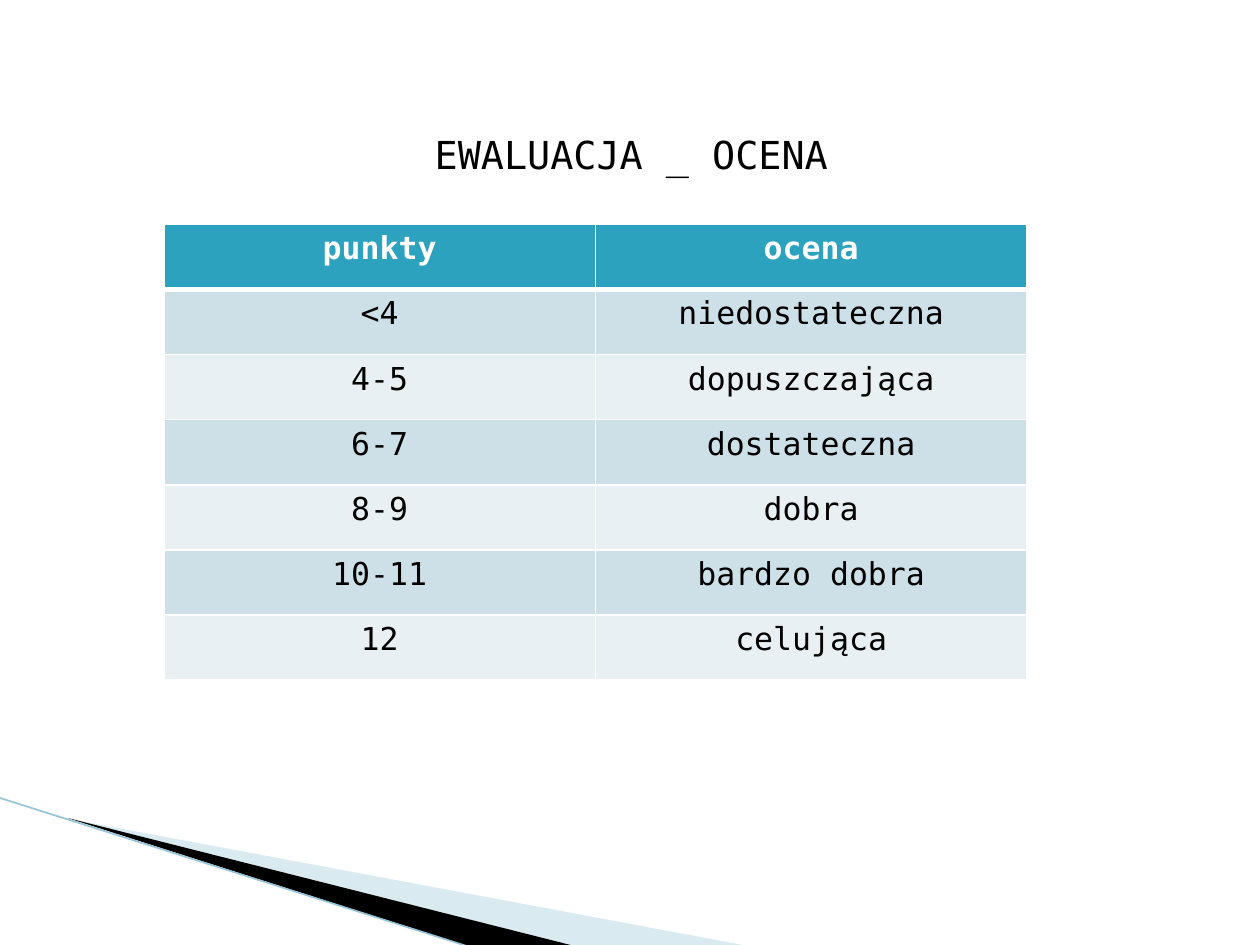
from lxml import etree
from pptx import Presentation
from pptx.dml.color import RGBColor
from pptx.enum.shapes import MSO_CONNECTOR
from pptx.enum.text import MSO_ANCHOR, MSO_AUTO_SIZE, PP_ALIGN
from pptx.oxml.ns import qn
from pptx.util import Inches, Pt

CENTER, LEFT = PP_ALIGN.CENTER, PP_ALIGN.LEFT
TOP = MSO_ANCHOR.TOP
GROW = MSO_AUTO_SIZE.SHAPE_TO_FIT_TEXT
LINE = MSO_CONNECTOR.STRAIGHT
FONT = "DejaVu Sans Mono"
WIDE, HIGH = 10, 7.5
ROWS = [
    ("punkty", "ocena"),
    ("<4", "niedostateczna"),
    ("4-5", "dopuszczająca"),
    ("6-7", "dostateczna"),
    ("8-9", "dobra"),
    ("10-11", "bardzo dobra"),
    ("12", "celująca"),
]


def paint(color, hue):
    color.rgb = RGBColor.from_string(hue)


def style(par, size, hue, bold, align):
    par.alignment = align
    par.font.name = FONT
    par.font.size = Pt(size)
    par.font.bold = bold
    paint(par.font.color, hue)


def wedge(slide, points, hue, alpha=None):
    dots = [(Inches(x), Inches(y)) for x, y in points]
    form = slide.shapes.build_freeform(*dots[0])
    form.add_line_segments(dots[1:], close=True)
    shape = form.convert_to_shape()
    shape.shadow.inherit = False
    shape.fill.solid()
    paint(shape.fill.fore_color, hue)
    shape.line.fill.background()
    if alpha:
        tone = shape.fill._xPr.find(".//" + qn("a:srgbClr"))
        etree.SubElement(tone, qn("a:alpha"), val=str(alpha * 1000))


def add_corner(slide, left, top):
    base = HIGH + 0.01
    wedge(slide, [(left + 0.02, top + 0.01), (5.95, base), (4.56, base)],
          "A0CBDC", 40)
    wedge(slide, [(left, top), (4.57, base), (3.72, base)], "000000")
    edge = slide.shapes.add_connector(
        LINE, Inches(-0.01), Inches(top - 0.16), Inches(3.71), Inches(base))
    paint(edge.line.color, "97C5D8")
    edge.line.width = Pt(0.95)
    etree.SubElement(edge._element.spPr, qn("a:effectLst"))


def add_edge(cell, side, width):
    props = cell._tc.get_or_add_tcPr()
    line = etree.SubElement(props, qn("a:ln" + side), w=str(Pt(width)))
    fill = etree.SubElement(line, qn("a:solidFill"))
    etree.SubElement(fill, qn("a:srgbClr"), val="FFFFFF")


def add_grades(slide, left, top, width, height):
    frame = slide.shapes.add_table(
        len(ROWS), len(ROWS[0]), Inches(left), Inches(top),
        Inches(width), Inches(height))
    for i, row in enumerate(ROWS):
        head = i == 0
        hue = "2DA2BF" if head else ("E8F0F4", "CDE0E8")[i % 2]
        for j, word in enumerate(row):
            cell = frame.table.cell(i, j)
            for side in "LRTB":
                thick = (i, side) in ((0, "B"), (1, "T"))
                add_edge(cell, side, 3 if thick else 1)
            cell.fill.solid()
            paint(cell.fill.fore_color, hue)
            cell.text = word
            style(cell.text_frame.paragraphs[0], 18,
                  "FFFFFF" if head else "000000", head, CENTER)


def add_title(slide, left, top, width, height):
    title = slide.shapes.title
    title.left, title.top = Inches(left), Inches(top)
    title.width, title.height = Inches(width), Inches(height)
    frame = title.text_frame
    frame.text = "EWALUACJA _ OCENA"
    frame.word_wrap = False
    frame.auto_size = GROW
    frame.vertical_anchor = TOP
    style(frame.paragraphs[0], 22, "000000", False, LEFT)


def main():
    deck = Presentation()
    deck.slide_width, deck.slide_height = Inches(WIDE), Inches(HIGH)
    slide = deck.slides.add_slide(deck.slide_layouts[5])
    add_corner(slide, 0.53, 6.49)
    add_grades(slide, 1.3, 1.78, 6.85, 3.62)
    add_title(slide, 3.35, 0.99, 3.37, 0.47)
    deck.save("out.pptx")


if __name__ == "__main__":
    main()
